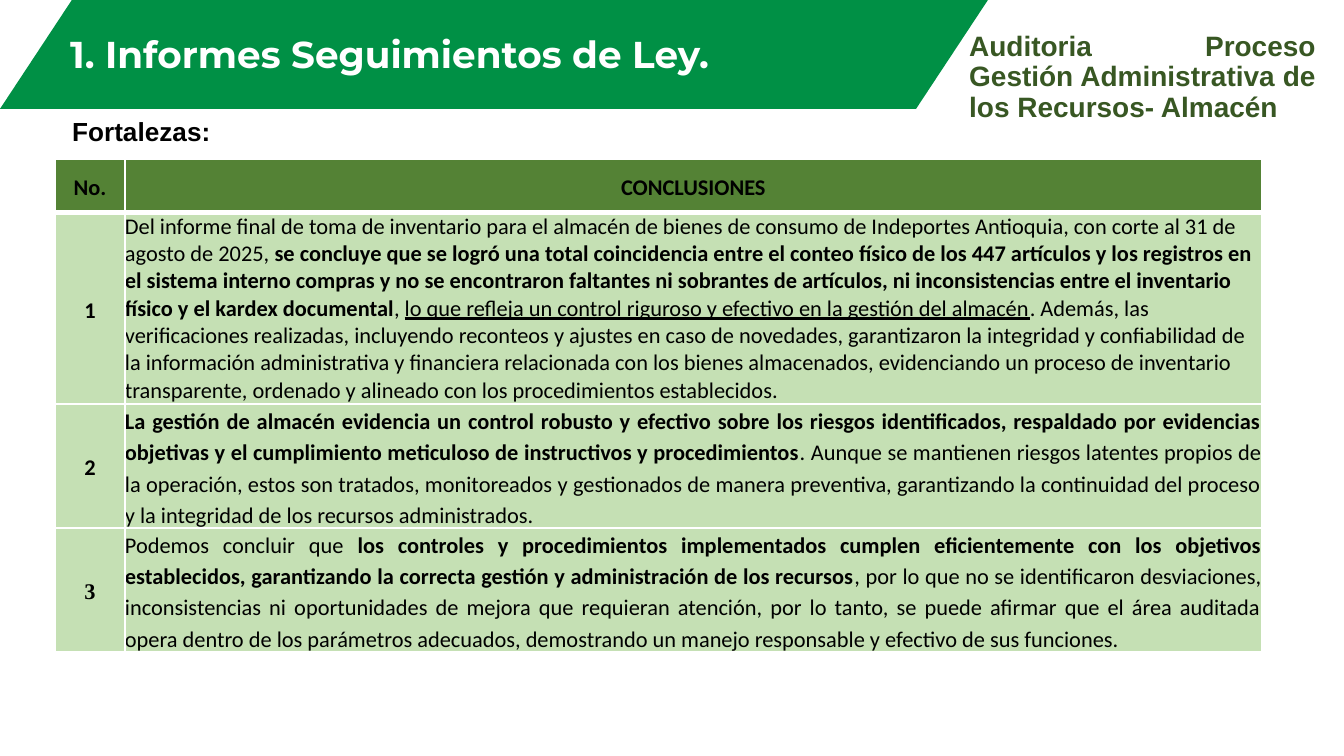
from dataclasses import dataclass

from lxml import etree
from pptx import Presentation
from pptx.dml.color import RGBColor
from pptx.enum import shapes, text
from pptx.oxml import ns
from pptx.util import Emu, Pt

PX = 914400 / 134.4
BLACK = RGBColor(0, 0, 0)
WHITE = RGBColor(255, 255, 255)
BANNER_GREEN = RGBColor(0x00, 0x90, 0x45)
DARK_GREEN = RGBColor(0x38, 0x57, 0x23)
HEADER_GREEN = RGBColor(0x54, 0x82, 0x35)
ROW_GREEN = RGBColor(0xC5, 0xE0, 0xB4)
ALIGN = text.PP_ALIGN
ANCHOR = text.MSO_ANCHOR
FIT = text.MSO_AUTO_SIZE
CENTERED = dict(alignment=ALIGN.CENTER, line_spacing=1.15, space_after=Pt(6))
JUSTIFIED = dict(CENTERED, alignment=ALIGN.JUSTIFY)
NO_MARGINS = dict(margin_left=0, margin_top=0, margin_right=0, margin_bottom=0)


@dataclass
class Span:
    text: str
    bold: bool = False
    underline: bool | None = None


@dataclass
class Box:
    left: int
    top: int
    width: int
    height: int


@dataclass
class Conclusion:
    number: str
    spans: list[Span]
    fmt: dict
    number_font: str = "Calibri"


CONCLUSIONS = [
    Conclusion("1", [
        Span("Del informe final de toma de inventario para el almacén de bienes de consumo de "
             "Indeportes Antioquia, con corte al 31 de agosto de 2025, "),
        Span("se concluye que se logró una total coincidencia entre el conteo físico de los 447 "
             "artículos y los registros en el sistema interno compras y no se encontraron "
             "faltantes ni sobrantes de artículos, ni inconsistencias entre el inventario físico "
             "y el kardex documental", bold=True),
        Span(", "),
        Span("lo que refleja un control riguroso y efectivo en la gestión del almacén",
             underline=True),
        Span(". Además, las verificaciones realizadas, incluyendo reconteos y ajustes en caso de "
             "novedades, garantizaron la integridad y confiabilidad de la información "
             "administrativa y financiera relacionada con los bienes almacenados, evidenciando "
             "un proceso de inventario transparente, ordenado y alineado con los procedimientos "
             "establecidos."),
    ], dict(alignment=ALIGN.LEFT)),
    Conclusion("2", [
        Span("La gestión de almacén evidencia un control robusto y efectivo sobre los riesgos "
             "identificados, respaldado por evidencias objetivas y el cumplimiento meticuloso de "
             "instructivos y procedimientos", bold=True),
        Span(". Aunque se mantienen riesgos latentes propios de la operación, estos son tratados, "
             "monitoreados y gestionados de manera preventiva, garantizando la continuidad del "
             "proceso y la integridad de los recursos administrados."),
    ], JUSTIFIED),
    Conclusion("3", [
        Span("Podemos concluir que "),
        Span("los controles y procedimientos implementados cumplen eficientemente con los "
             "objetivos establecidos, garantizando la correcta gestión y administración de los "
             "recursos", bold=True),
        Span(", por lo que no se identificaron desviaciones, inconsistencias ni oportunidades de "
             "mejora que requieran atención, por lo tanto, se puede afirmar que el área auditada "
             "opera dentro de los parámetros adecuados, demostrando un manejo responsable y "
             "efectivo de sus funciones."),
    ], JUSTIFIED, number_font="Times New Roman"),
]


def px(n: int) -> Emu:
    return Emu(round(n * PX))


def apply(obj, values: dict) -> None:
    for name, value in values.items():
        setattr(obj, name, value)


def place(box: Box) -> list[Emu]:
    return [px(n) for n in (box.left, box.top, box.width, box.height)]


def write(tf, spans: list[Span], font: str, size: int, color: RGBColor, fmt: dict) -> None:
    p = tf.paragraphs[0]
    apply(p, fmt)
    for span in spans:
        r = p.add_run()
        r.text = span.text
        apply(r.font, dict(name=font, size=Pt(size), bold=span.bold, underline=span.underline))
        r.font.color.rgb = color


def add_label(s, box: Box, label: str, size: int, color: RGBColor, fmt: dict, wrap: bool) -> None:
    tf = s.shapes.add_textbox(*place(box)).text_frame
    apply(tf, dict(word_wrap=wrap, auto_size=FIT.SHAPE_TO_FIT_TEXT))
    write(tf, [Span(label, bold=True)], "Arial", size, color, fmt)


def format_cell(cell, fill: RGBColor, anchor, bottom: int = 1) -> None:
    tc_pr = cell._tc.get_or_add_tcPr()
    for side, width in dict(L=1, R=1, T=1, B=bottom).items():
        ln = etree.SubElement(tc_pr, ns.qn(f"a:ln{side}"), w=str(Pt(width)))
        solid = etree.SubElement(ln, ns.qn("a:solidFill"))
        etree.SubElement(solid, ns.qn("a:srgbClr"), val=str(WHITE))
    cell.fill.solid()
    cell.fill.fore_color.rgb = fill
    apply(cell, dict(NO_MARGINS, vertical_anchor=anchor))


def add_title(s) -> None:
    sp = s.shapes.add_shape(shapes.MSO_SHAPE.PARALLELOGRAM, *place(Box(0, 0, 988, 109)))
    sp.adjustments[0] = 0.66
    sp.shadow.inherit = False
    sp.fill.solid()
    sp.fill.fore_color.rgb = BANNER_GREEN
    sp.line.fill.background()
    title = s.shapes.title
    title.element.addprevious(sp.element)
    apply(title, dict(zip(("left", "top", "width", "height"), place(Box(0, 26, 790, 57)))))
    tf = title.text_frame
    apply(tf, dict(vertical_anchor=ANCHOR.BOTTOM, word_wrap=True, auto_size=FIT.NONE))
    write(tf, [Span("1. Informes Seguimientos de Ley. ", bold=True)], "Montserrat", 20, WHITE,
          dict(alignment=ALIGN.CENTER, line_spacing=0.9))


def add_conclusions(s) -> None:
    cols, rows = (70, 1137), (54, 191, 124, 124)
    box = Box(55, 159, sum(cols), sum(rows))
    table = s.shapes.add_table(len(rows), len(cols), *place(box)).table
    for col, width in zip(table.columns, cols):
        col.width = px(width)
    for row, height in zip(table.rows, rows):
        row.height = px(height)
    for i, heading in enumerate(("No.", "CONCLUSIONES")):
        cell = table.cell(0, i)
        format_cell(cell, HEADER_GREEN, ANCHOR.MIDDLE, bottom=3)
        write(cell.text_frame, [Span(heading, bold=True)], "Calibri", 12, BLACK, CENTERED)
    for i, item in enumerate(CONCLUSIONS, 1):
        number, body = table.cell(i, 0), table.cell(i, 1)
        format_cell(number, ROW_GREEN, ANCHOR.MIDDLE)
        write(number.text_frame, [Span(item.number, bold=True)], item.number_font, 12, BLACK,
              CENTERED)
        format_cell(body, ROW_GREEN, ANCHOR.TOP)
        write(body.text_frame, item.spans, "Calibri", 12, BLACK, item.fmt)


def main() -> None:
    prs = Presentation()
    apply(prs, dict(slide_width=px(1344), slide_height=px(756)))
    s = prs.slides.add_slide(prs.slide_layouts[5])
    add_title(s)
    add_label(s, Box(956, 26, 373, 105),
              "Auditoria Proceso Gestión Administrativa de los Recursos- Almacén",
              15, DARK_GREEN, dict(alignment=ALIGN.JUSTIFY, line_spacing=0.9), True)
    add_label(s, Box(59, 109, 180, 46), "Fortalezas:  ", 14, BLACK,
              dict(alignment=ALIGN.JUSTIFY), False)
    add_conclusions(s)
    prs.save("out.pptx")


if __name__ == "__main__":
    main()
